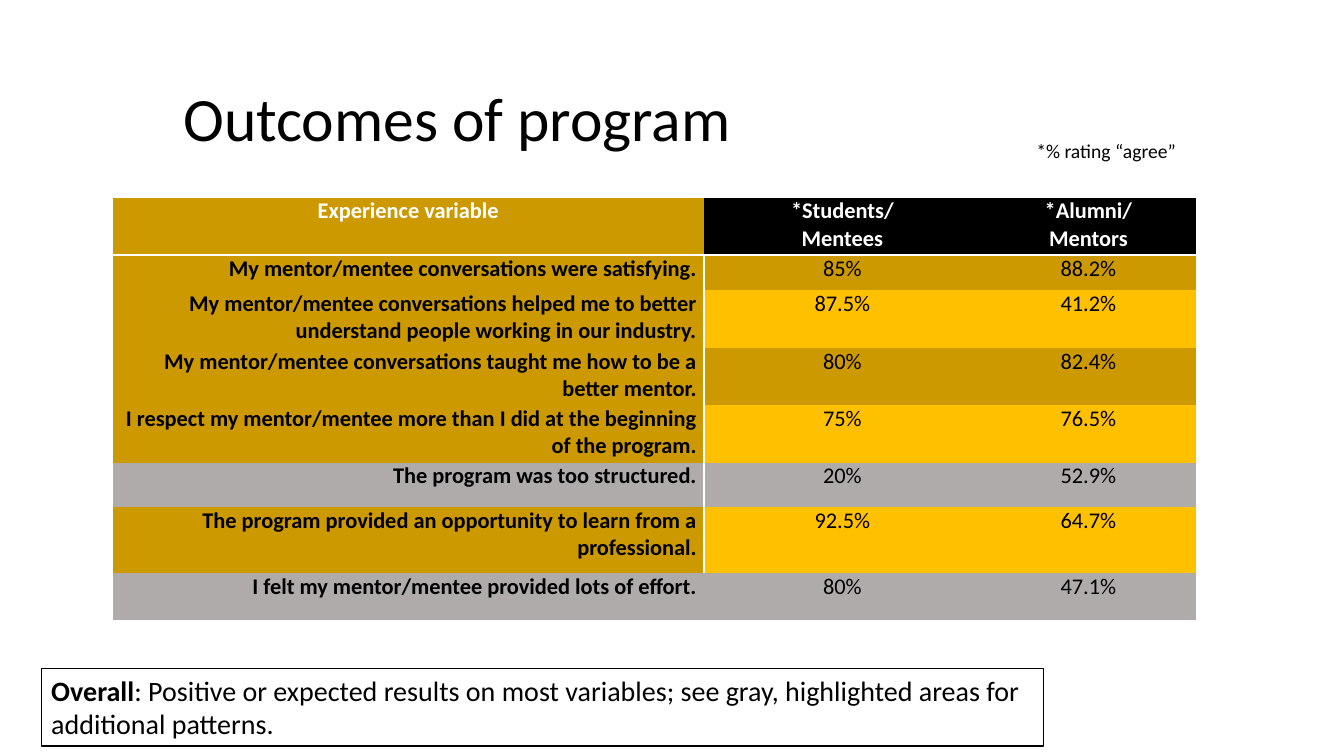
from dataclasses import dataclass

from lxml.etree import SubElement
from pptx import Presentation
from pptx.dml.color import RGBColor
from pptx.enum.shapes import MSO_SHAPE as Preset
from pptx.enum.text import MSO_ANCHOR as Anchor, PP_ALIGN as Align
from pptx.oxml.ns import qn
from pptx.slide import Slide
from pptx.table import Table, _Cell as Cell
from pptx.text.text import TextFrame, _Paragraph as Paragraph
from pptx.util import Inches, Pt

BLACK = RGBColor(0x00, 0x00, 0x00)
WHITE = RGBColor(0xFF, 0xFF, 0xFF)
GOLD = RGBColor(0xCC, 0x9A, 0x00)
AMBER = RGBColor(0xFF, 0xC0, 0x00)
GRAY = RGBColor(0xAF, 0xAB, 0xAB)

FONT = "Calibri"
GRID = Inches(0.1)
NO_STYLE = "{2D5ABB26-0587-4C30-8999-92F81FD0307C}"


@dataclass(frozen=True)
class Area:
    column: float
    row: float
    columns: float
    rows: float

    def emu(self) -> tuple[int, ...]:
        return tuple(round(n * GRID) for n in (self.column, self.row, self.columns, self.rows))


@dataclass(frozen=True)
class Outcome:
    statement: str
    students: str
    alumni: str
    rows: float
    fill: RGBColor
    divided: bool = True

    @property
    def statement_fill(self) -> RGBColor:
        return GRAY if self.fill == GRAY else GOLD


TITLE_AREA = Area(17.2, 4.8, 115, 14.5)
TABLE_AREA = Area(11.2, 19.6, 107.4, 41.9)
SUMMARY_AREA = Area(4.1, 66.3, 99.4, 7.7)
NOTE_AREA = Area(101.8, 13.3, 16, 3.4)

TABLE_COLUMNS = (58.6, 27.5, 21.3)
HEADER_ROWS = 5.7
HEADERS = (
    (("Experience variable",), GOLD),
    (("*Students/", "Mentees"), BLACK),
    (("*Alumni/", "Mentors"), BLACK),
)
OUTCOMES = (
    Outcome("My mentor/mentee conversations were satisfying.", "85%", "88.2%", 3.5, GOLD),
    Outcome("My mentor/mentee conversations helped me to better understand people working in our industry.",
            "87.5%", "41.2%", 5.7, AMBER),
    Outcome("My mentor/mentee conversations taught me how to be a better mentor.",
            "80%", "82.4%", 5.7, GOLD),
    Outcome("I respect my mentor/mentee more than I did at the beginning of the program.",
            "75%", "76.5%", 5.7, AMBER),
    Outcome("The program was too structured.", "20%", "52.9%", 4.4, GRAY),
    Outcome("The program provided an opportunity to learn from a professional.",
            "92.5%", "64.7%", 6.6, AMBER),
    Outcome("I felt my mentor/mentee provided lots of effort.", "80%", "47.1%", 4.6, GRAY, divided=False),
)


def add_span(para: Paragraph, text: str, size: float, color: RGBColor = BLACK, bold: bool = False) -> None:
    span = para.add_run()
    span.text = text
    span.font.name = FONT
    span.font.size = Pt(size)
    span.font.bold = bold
    span.font.color.rgb = color


def add_text_box(page: Slide, area: Area, wrap: bool = True) -> TextFrame:
    frame = page.shapes.add_textbox(*area.emu()).text_frame
    frame.word_wrap = wrap
    return frame


def fill_cell(cell: Cell, lines: tuple[str, ...], fill: RGBColor, align: Align,
              color: RGBColor = BLACK, bold: bool = False) -> None:
    cell.margin_left = cell.margin_right = Inches(0.07)
    cell.margin_top = cell.margin_bottom = 0
    cell.fill.solid()
    cell.fill.fore_color.rgb = fill
    frame = cell.text_frame
    for index, line in enumerate(lines):
        para = frame.add_paragraph() if index else frame.paragraphs[0]
        para.alignment = align
        add_span(para, line, 16, color, bold)


def add_border(cell: Cell, side: str) -> None:
    properties = cell._tc.get_or_add_tcPr()
    line = SubElement(properties, qn(f"a:{side}"), w=str(Pt(2)))
    properties.insert(0, line)
    solid = SubElement(line, qn("a:solidFill"))
    SubElement(solid, qn("a:srgbClr"), val=str(WHITE))


def add_outcome_table(page: Slide) -> None:
    table: Table = page.shapes.add_table(
        len(OUTCOMES) + 1, len(TABLE_COLUMNS), *TABLE_AREA.emu()).table
    table._tbl.tblPr.find(qn("a:tableStyleId")).text = NO_STYLE
    for column, width in zip(table.columns, TABLE_COLUMNS):
        column.width = round(width * GRID)
    heights = (HEADER_ROWS, *(outcome.rows for outcome in OUTCOMES))
    for row, height in zip(table.rows, heights):
        row.height = round(height * GRID)

    for index, (lines, fill) in enumerate(HEADERS):
        cell = table.cell(0, index)
        fill_cell(cell, lines, fill, Align.CENTER, WHITE, bold=True)
        add_border(cell, "lnB")

    for index, outcome in enumerate(OUTCOMES, start=1):
        statement = table.cell(index, 0)
        fill_cell(statement, (outcome.statement,), outcome.statement_fill, Align.RIGHT, bold=True)
        if outcome.divided:
            add_border(statement, "lnR")
        for column, share in enumerate((outcome.students, outcome.alumni), start=1):
            fill_cell(table.cell(index, column), (share,), outcome.fill, Align.CENTER)


def add_title(page: Slide) -> None:
    frame = add_text_box(page, TITLE_AREA)
    frame.vertical_anchor = Anchor.MIDDLE
    para = frame.paragraphs[0]
    para.line_spacing = 0.9
    add_span(para, "Outcomes of program", 44)


def add_summary(page: Slide) -> None:
    box = page.shapes.add_shape(Preset.RECTANGLE, *SUMMARY_AREA.emu())
    box.shadow.inherit = False
    box.fill.solid()
    box.fill.fore_color.rgb = WHITE
    box.line.color.rgb = BLACK
    box.line.width = Pt(1)
    frame = box.text_frame
    frame.word_wrap = True
    frame.vertical_anchor = Anchor.TOP
    para = frame.paragraphs[0]
    para.alignment = Align.LEFT
    add_span(para, "Overall", 20, bold=True)
    add_span(para, ": Positive or expected results on most variables; "
                   "see gray, highlighted areas for additional patterns.", 20)


def main() -> None:
    deck = Presentation()
    deck.slide_width, deck.slide_height = Inches(13.33), Inches(7.5)
    page = deck.slides.add_slide(deck.slide_layouts[6])
    add_title(page)
    add_outcome_table(page)
    add_summary(page)
    note = add_text_box(page, NOTE_AREA, wrap=False)
    add_span(note.paragraphs[0], "*% rating “agree”", 14)
    deck.save("out.pptx")


if __name__ == "__main__":
    main()
